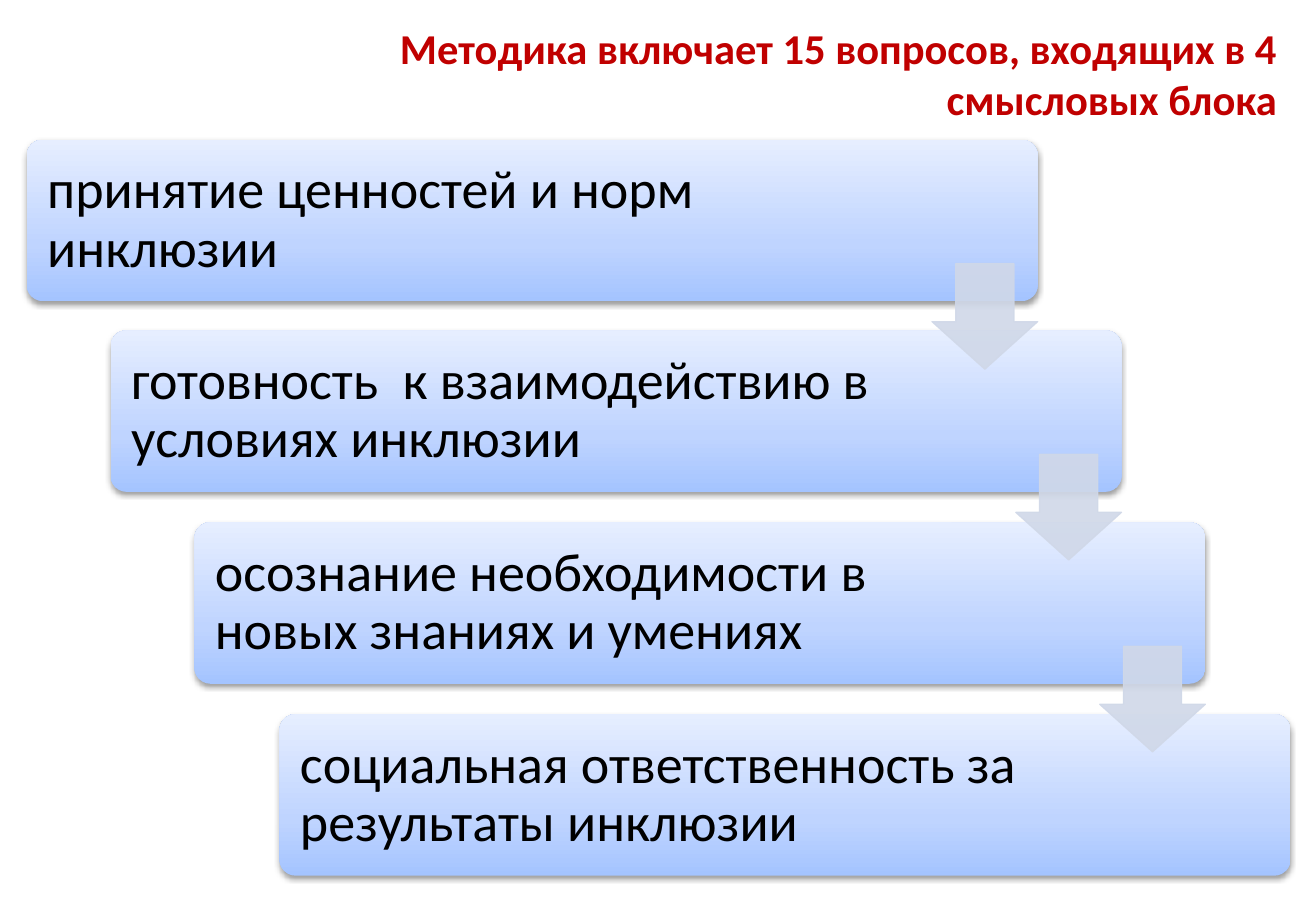
from copy import deepcopy

from lxml.etree import SubElement
from pptx import Presentation
from pptx.dml.color import RGBColor
from pptx.enum.shapes import MSO_SHAPE
from pptx.enum.text import MSO_ANCHOR, MSO_AUTO_SIZE, PP_ALIGN
from pptx.oxml.ns import qn
from pptx.util import Emu, Pt

RED = RGBColor(0xC0, 0x00, 0x00)
BLACK = RGBColor(0x00, 0x00, 0x00)
GREY = RGBColor(0xD0, 0xD8, 0xE8)
BLUES = [
    (0, RGBColor(0xA4, 0xC4, 0xFF)),
    (0.35, RGBColor(0xBF, 0xD4, 0xFF)),
    (1, RGBColor(0xE6, 0xEE, 0xFF)),
]
SCALE = 9144
WIDE, HIGH = 832, 133
ARROW = 87
BLOCKS = [
    "принятие ценностей и норм инклюзии",
    "готовность  к взаимодействию в условиях инклюзии",
    "осознание необходимости в новых знаниях и умениях",
    "социальная ответственность за результаты инклюзии",
]


def px(count):
    return Emu(count * SCALE)


class Deck:
    font = "Calibri"

    def __init__(self, wide, high):
        self.prs = Presentation()
        self.prs.slide_width, self.prs.slide_height = px(wide), px(high)
        self.slide = self.prs.slides.add_slide(self.prs.slide_layouts[5])

    def label(self, frame, text, size, color, align, bold=False):
        frame.word_wrap = True
        frame.auto_size = MSO_AUTO_SIZE.NONE
        frame.vertical_anchor = MSO_ANCHOR.MIDDLE
        par = frame.paragraphs[0]
        par.alignment = align
        run = par.add_run()
        run.text = text
        run.font.name = self.font
        run.font.size = Pt(size)
        run.font.bold = bold
        run.font.color.rgb = color
        return par

    def title(self, text, x, y, w, h):
        title = self.slide.shapes.title
        title.left, title.top, title.width, title.height = map(px, (x, y, w, h))
        self.label(title.text_frame, text, 25.2, RED, PP_ALIGN.RIGHT, True)

    def shape(self, kind, x, y, w, h, ratios):
        shape = self.slide.shapes.add_shape(kind, *map(px, (x, y, w, h)))
        shape.shadow.inherit = False
        for i, ratio in enumerate(ratios):
            shape.adjustments[i] = ratio
        return shape

    def shade(self, shape):
        shape.fill.gradient()
        shape.fill.gradient_angle = 90
        stops = shape._element.spPr.find(qn("a:gradFill")).find(qn("a:gsLst"))
        stops.insert(1, deepcopy(stops[0]))
        for stop, (place, color) in zip(shape.fill.gradient_stops, BLUES):
            stop.position = place
            stop.color.rgb = color

    def shadow(self, shape):
        effects = shape._element.spPr.find(qn("a:effectLst"))
        outer = SubElement(effects, qn("a:outerShdw"), blurRad="40000",
                           dist="20000", dir="5400000", rotWithShape="0")
        color = SubElement(outer, qn("a:srgbClr"), val=str(BLACK))
        SubElement(color, qn("a:alpha"), val="38000")

    def block(self, text, x, y):
        box = self.shape(MSO_SHAPE.ROUNDED_RECTANGLE, x, y, WIDE, HIGH, [0.1])
        self.shade(box)
        box.line.fill.background()
        self.shadow(box)
        frame = box.text_frame
        frame.margin_left = frame.margin_top = frame.margin_bottom = px(13)
        frame.margin_right = px(170)
        par = self.label(frame, text, 32, BLACK, PP_ALIGN.LEFT)
        par.line_spacing = 0.9

    def arrow(self, x, y):
        arrow = self.shape(MSO_SHAPE.DOWN_ARROW, x, y, ARROW, ARROW, [0.55, 0.45])
        arrow.line.width = Pt(0.75)
        for fill in (arrow.fill, arrow.line.fill):
            fill.solid()
            fill.fore_color.rgb = GREY
        for color in arrow._element.spPr.iter(qn("a:srgbClr")):
            SubElement(color, qn("a:alpha"), val="90000")


def main():
    deck = Deck(1083, 750)
    deck.title("Методика включает 15 вопросов, входящих в 4 смысловых блока",
               242, 21, 819, 79)
    spots = [(22 + i * 208 // 3, 115 + i * 473 // 3) for i in range(len(BLOCKS))]
    for text, (x, y) in zip(BLOCKS, spots):
        deck.block(text, x, y)
    for x, y in spots[:-1]:
        deck.arrow(x + WIDE - ARROW, y + 102)
    deck.prs.save("out.pptx")


if __name__ == "__main__":
    main()
